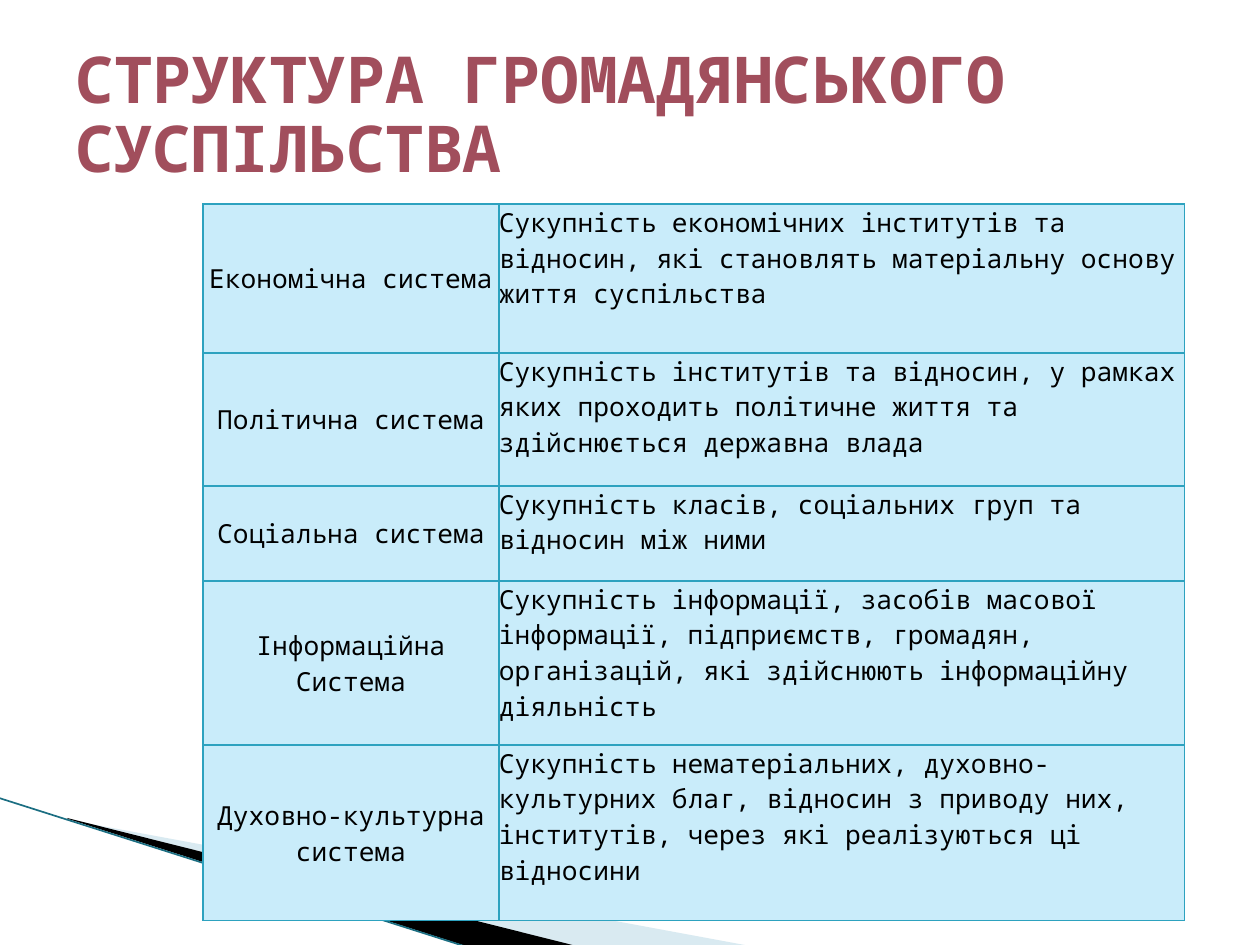
from dataclasses import dataclass

from lxml import etree
from pptx import Presentation
from pptx.dml.color import RGBColor
from pptx.enum.shapes import MSO_CONNECTOR
from pptx.enum.text import MSO_ANCHOR, PP_ALIGN
from pptx.oxml.ns import qn
from pptx.util import Emu, Pt

EMU_PER_PX = 914400 / 126
LEFT, CENTER = PP_ALIGN.LEFT, PP_ALIGN.CENTER
TOP, MIDDLE = MSO_ANCHOR.TOP, MSO_ANCHOR.MIDDLE
STRAIGHT = MSO_CONNECTOR.STRAIGHT
BORDER_TAGS = ("a:lnL", "a:lnR", "a:lnT", "a:lnB")


@dataclass(frozen=True)
class Theme:
    font: str = "Noto Sans Mono"
    title_size: float = 36.9
    body_size: float = 15
    title: str = "A14E5C"
    text: str = "000000"
    cell: str = "C9ECFA"
    border: str = "2DA2BF"
    border_width: float = 0.75
    ribbon_light: str = "A0CBDC"
    ribbon_dark: str = "000000"
    ribbon_edge: str = "1B6E82"
    edge_width: float = 0.95


@dataclass(frozen=True)
class Ribbon:
    points: tuple[tuple[int, int], ...]
    color: str
    opacity: int = 100


@dataclass(frozen=True)
class Subsystem:
    name: str
    meaning: str
    height: int


THEME = Theme()
TITLE = "СТРУКТУРА ГРОМАДЯНСЬКОГО СУСПІЛЬСТВА"
COLUMN_WIDTHS = (296, 686)
RIBBONS = (
    Ribbon(((69, 820), (750, 946), (575, 946), (69, 819)), THEME.ribbon_light, 40),
    Ribbon(((67, 818), (576, 946), (469, 947), (68, 819)), THEME.ribbon_dark),
)
SUBSYSTEMS = (
    Subsystem("Економічна система",
              "Сукупність економічних інститутів та відносин, які становлять "
              "матеріальну основу життя суспільства", 149),
    Subsystem("Політична система",
              "Сукупність інститутів та відносин, у рамках яких проходить "
              "політичне життя та здійснюється державна влада", 133),
    Subsystem("Соціальна система",
              "Сукупність класів, соціальних груп та відносин між ними", 95),
    Subsystem("Інформаційна Система",
              "Сукупність інформації, засобів масової інформації, підприємств, "
              "громадян, організацій, які здійснюють інформаційну діяльність", 164),
    Subsystem("Духовно-культурна система",
              "Сукупність нематеріальних, духовно-культурних благ, відносин з "
              "приводу них, інститутів, через які реалізуються ці відносини", 176),
)


def px(length: int) -> Emu:
    return Emu(round(length * EMU_PER_PX))


def rgb(color: str) -> RGBColor:
    return RGBColor.from_string(color)


def write(paragraph, text: str, size: float, color: str, bold: bool = False) -> None:
    run = paragraph.add_run()
    run.text = text
    formats = {"name": THEME.font, "size": Pt(size), "bold": bold}
    for attribute, value in formats.items():
        setattr(run.font, attribute, value)
    run.font.color.rgb = rgb(color)


def draw_ribbon(slide, ribbon: Ribbon) -> None:
    start, *others = ribbon.points
    builder = slide.shapes.build_freeform(*start, scale=EMU_PER_PX)
    builder.add_line_segments(others, close=True)
    band = builder.convert_to_shape()
    band.shadow.inherit = False
    band.line.fill.background()
    band.fill.solid()
    band.fill.fore_color.rgb = rgb(ribbon.color)
    if ribbon.opacity < 100:
        color = band.fill._xPr.find(qn("a:solidFill"))[0]
        etree.SubElement(color, qn("a:alpha"), val=str(ribbon.opacity * 1000))


def draw_ribbon_edge(slide) -> None:
    edge = slide.shapes.add_connector(STRAIGHT, px(-1), px(798), px(467), px(947))
    edge.line.color.rgb = rgb(THEME.ribbon_edge)
    edge.line.width = Pt(THEME.edge_width)
    etree.SubElement(edge._element.spPr, qn("a:effectLst"))


def draw_title(slide) -> None:
    title = slide.shapes.add_textbox(px(63), px(38), px(1134), px(158))
    frame = title.text_frame
    frame.word_wrap = True
    frame.vertical_anchor = MIDDLE
    heading = frame.paragraphs[0]
    heading.line_spacing = 0.9
    write(heading, TITLE, THEME.title_size, THEME.title, bold=True)


def add_borders(cell) -> None:
    properties = cell._tc.get_or_add_tcPr()
    for tag in BORDER_TAGS:
        border = etree.SubElement(properties, qn(tag), w=str(Pt(THEME.border_width)))
        fill = etree.SubElement(border, qn("a:solidFill"))
        etree.SubElement(fill, qn("a:srgbClr"), val=THEME.border)


def fill_cell(cell, text: str, alignment: PP_ALIGN, anchor: MSO_ANCHOR) -> None:
    formats = {"margin_left": 0, "margin_right": 0, "margin_top": 0,
               "margin_bottom": 0, "vertical_anchor": anchor}
    for attribute, value in formats.items():
        setattr(cell, attribute, value)
    add_borders(cell)
    cell.fill.solid()
    cell.fill.fore_color.rgb = rgb(THEME.cell)
    paragraph = cell.text_frame.paragraphs[0]
    paragraph.alignment = alignment
    write(paragraph, text, THEME.body_size, THEME.text)


def draw_subsystems(slide) -> None:
    height = sum(subsystem.height for subsystem in SUBSYSTEMS)
    table = slide.shapes.add_table(
        len(SUBSYSTEMS), len(COLUMN_WIDTHS),
        px(203), px(204), px(sum(COLUMN_WIDTHS)), px(height)).table
    table.first_row = table.horz_banding = False
    for column, width in zip(table.columns, COLUMN_WIDTHS):
        column.width = px(width)
    for index, subsystem in enumerate(SUBSYSTEMS):
        table.rows[index].height = px(subsystem.height)
        fill_cell(table.cell(index, 0), subsystem.name, CENTER, MIDDLE)
        fill_cell(table.cell(index, 1), subsystem.meaning, LEFT, TOP)


def main() -> None:
    presentation = Presentation()
    presentation.slide_width = px(1260)
    presentation.slide_height = px(945)
    slide = presentation.slides.add_slide(presentation.slide_layouts[6])
    for ribbon in RIBBONS:
        draw_ribbon(slide, ribbon)
    draw_ribbon_edge(slide)
    draw_subsystems(slide)
    draw_title(slide)
    presentation.save("out.pptx")


if __name__ == "__main__":
    main()
